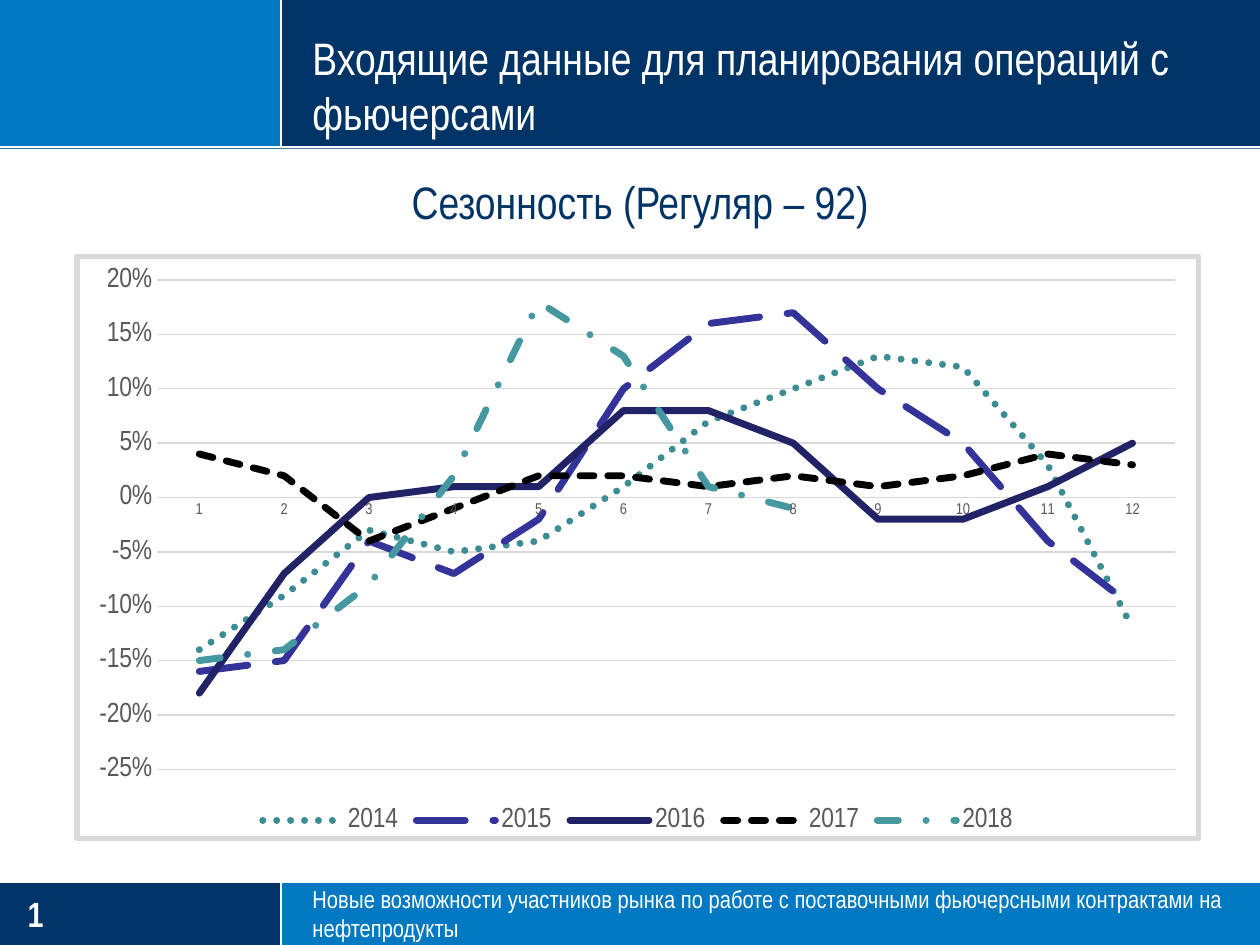
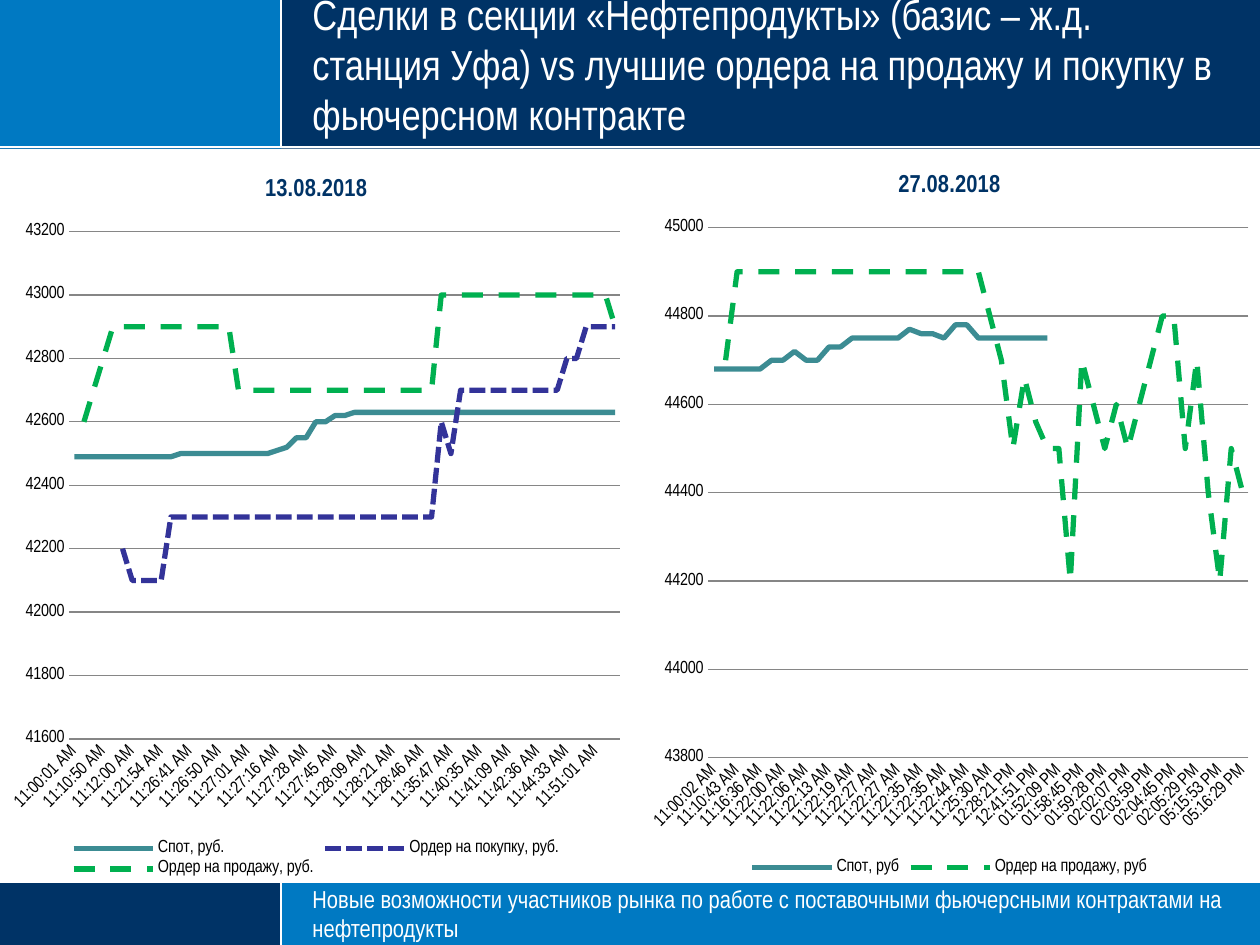
import pptx
import pptx.chart.data
import pptx.dml.color
import pptx.enum.chart
import pptx.enum.dml
import pptx.enum.shapes
import pptx.enum.text
import pptx.oxml
import pptx.util
from pptx.util import Cm

# Shared look
FONT = "Arial Narrow"
NAVY, BLUE, WHITE, BLACK = "003366", "0079C2", "FFFFFF", "000000"
TEAL, INDIGO, GREEN = "3C8C93", "333399", "00B050"
LABEL_GREY, PALE_GREY, GRID_GREY = "595959", "D9D9D9", "868686"
SLIDE_W, SLIDE_H = 25.4, 19.05
HEAD_H, HEAD_RULE, FOOT_TOP, SIDE_W = 3, 2.97, 17.78, 5.67
TEXT_LEFT, TEXT_W = 6.3, 18.49
FOOTER = ("Новые возможности участников рынка по работе с поставочными "
          "фьючерсными контрактами на нефтепродукты")
DASH = pptx.enum.dml.MSO_LINE
ANCHOR = pptx.enum.text.MSO_ANCHOR
NS = ('xmlns:a="http://schemas.openxmlformats.org/drawingml/2006/main" '
      'xmlns:c="http://schemas.openxmlformats.org/drawingml/2006/chart"')

# Seasonality by month: name, colour, dash, values
SEASONS = [
    ("2014", TEAL, DASH.ROUND_DOT,
     [-.14, -.09, -.03, -.05, -.04, .01, .07, .1, .13, .12, .03, -.12]),
    ("2015", INDIGO, DASH.LONG_DASH,
     [-.16, -.15, -.04, -.07, -.02, .1, .16, .17, .1, .05, -.04, -.1]),
    ("2016", "222267", None,
     [-.18, -.07, 0, .01, .01, .08, .08, .05, -.02, -.02, .01, .05]),
    ("2017", BLACK, DASH.SQUARE_DOT,
     [.04, .02, -.04, -.01, .02, .02, .01, .02, .01, .02, .04, .03]),
    ("2018", "4597A0", DASH.DASH_DOT,
     [-.15, -.14, -.08, .02, .18, .13, .01, -.01] + [None] * 4),
]

# Deal times of the two trading days
TIMES_13 = """11:00:01 11:10:00 11:10:35 11:10:50 11:11:03 11:11:45 11:12:00 11:15:59
11:20:39 11:21:54 11:22:19 11:26:41 11:26:41 11:26:44 11:26:50 11:26:50 11:26:52
11:27:01 11:27:01 11:27:07 11:27:08 11:27:16 11:27:22 11:27:28 11:27:28 11:27:39
11:27:39 11:27:45 11:27:51 11:28:02 11:28:09 11:28:09 11:28:15 11:28:21 11:28:42
11:28:42 11:28:46 11:29:13 11:35:36 11:35:47 11:36:59 11:40:35 11:40:35 11:40:44
11:41:09 11:41:09 11:41:14 11:42:36 11:42:36 11:42:56 11:44:15 11:44:33 11:44:56
11:45:21 11:51:01 12:05:16 12:54:56"""
TIMES_27 = """11:00:02 11:09:28 11:10:43 11:10:56 11:16:36 11:22:00 11:22:00 11:22:06
11:22:06 11:22:06 11:22:13 11:22:13 11:22:19 11:22:19 11:22:27 11:22:27 11:22:27
11:22:35 11:22:35 11:22:35 11:22:35 11:22:44 11:22:44 11:22:44 11:25:30 12:27:51
12:28:21 12:34:21 12:41:51 12:47:31 13:52:09 13:52:59 13:58:45 13:59:05 13:59:28
14:01:47 14:02:07 14:03:41 14:03:59 14:04:35 14:04:45 14:04:56 14:05:29 17:15:07
17:15:53 17:16:12 17:16:29"""

# Prices as (value, number of deals in a row)
SPOT_13 = [(42490, 11), (42500, 10), (42510, 1), (42520, 1), (42550, 2), (42600, 2),
           (42620, 2), (42630, 28)]
BUY_13 = [(None, 5), (42200, 1), (42100, 4), (42300, 28), (42600, 1), (42500, 1),
          (42700, 11), (42800, 2), (42900, 4)]
SELL_13 = [(None, 1), (42600, 1), (42700, 1), (42800, 1), (42900, 13), (42700, 21),
           (43000, 18), (42900, 1)]
SPOT_27 = [(44680, 5), (44700, 2), (44720, 1), (44700, 2), (44730, 2), (44750, 5),
           (44770, 1), (44760, 2), (44750, 1), (44780, 2), (44750, 7), (None, 17)]
SELL_27 = [(None, 1), (44700, 1), (44900, 22), (44800, 1), (44700, 1), (44500, 1),
           (44660, 1), (44560, 1), (44500, 2), (44200, 1), (44700, 1), (44600, 1),
           (44500, 1), (44600, 1), (44500, 1), (44600, 1), (44700, 1), (44800, 2),
           (44500, 1), (44700, 1), (44400, 1), (44200, 1), (44500, 1), (44400, 1)]


def expand(runs):
    return [value for value, count in runs for _ in range(count)]


def day_fractions(times):
    clocks = [[int(part) for part in time.split(":")] for time in times.split()]
    return [(h * 3600 + m * 60 + s) / 86400 for h, m, s in clocks]


def rgb(hex_colour):
    return pptx.dml.color.RGBColor.from_string(hex_colour)


def apply(target, values):
    for name, value in values.items():
        setattr(target, name, value)


def style_font(font, size, colour, bold=False):
    apply(font, {"name": FONT, "size": pptx.util.Pt(size), "bold": bold})
    font.color.rgb = rgb(colour)


def style_line(line, colour, width, dash=None):
    line.color.rgb = rgb(colour)
    line.width = pptx.util.Pt(width)
    if dash:
        line.dash_style = dash


# Slide elements
def add_band(slide, box, colour):
    band = slide.shapes.add_shape(pptx.enum.shapes.MSO_SHAPE.RECTANGLE, *map(Cm, box))
    band.shadow.inherit = False
    band.fill.solid()
    band.fill.fore_color.rgb = rgb(colour)
    band.line.fill.background()


def add_rule(slide, *ends):
    rule = slide.shapes.add_connector(
        pptx.enum.shapes.MSO_CONNECTOR.STRAIGHT, *map(Cm, ends))
    style_line(rule.line, WHITE, 1.25)
    rule._element.spPr.append(pptx.oxml.parse_xml(f"<a:effectLst {NS}/>"))


def add_text(slide, box, text, size, colour, anchor=ANCHOR.MIDDLE, bold=False):
    frame = slide.shapes.add_textbox(*map(Cm, box)).text_frame
    apply(frame, {"word_wrap": True, "vertical_anchor": anchor, "margin_left": 0,
                  "margin_right": 0, "margin_top": 0, "margin_bottom": 0})
    frame.text = text
    style_font(frame.paragraphs[0].runs[0].font, size, colour, bold)


def add_frame_slide(deck, title, title_size):
    slide = deck.slides.add_slide(deck.slide_layouts[6])
    foot_h = SLIDE_H - FOOT_TOP
    for box, colour in [((0, 0, SLIDE_W, HEAD_H), NAVY),
                        ((0, FOOT_TOP, SLIDE_W, foot_h), BLUE),
                        ((0, 0, SIDE_W, HEAD_H), BLUE),
                        ((0, FOOT_TOP, SIDE_W, foot_h), NAVY)]:
        add_band(slide, box, colour)
    for edge in (HEAD_RULE, FOOT_TOP):
        add_rule(slide, 0, edge, SLIDE_W, edge)
    for top, bottom in ((0, HEAD_RULE), (FOOT_TOP, SLIDE_H)):
        add_rule(slide, SIDE_W, top, SIDE_W, bottom)
    add_text(slide, (TEXT_LEFT, 0, TEXT_W, 2.81), title, title_size, WHITE, ANCHOR.BOTTOM)
    add_text(slide, (TEXT_LEFT, FOOT_TOP, TEXT_W, foot_h), FOOTER, 14, WHITE)
    return slide


# Charts
def set_plot_area(chart, box, area):
    sides = box[2:] * 2
    parts = "".join(f'<c:{tag} val="{length / side:.4f}"/>'
                    for tag, length, side in zip("xywh", area, sides))
    layout = pptx.oxml.parse_xml(
        f'<c:layout {NS}><c:manualLayout><c:layoutTarget val="inner"/>'
        f'<c:xMode val="edge"/><c:yMode val="edge"/>{parts}</c:manualLayout></c:layout>')
    plot_area = chart._chartSpace.chart.plotArea
    for old in plot_area.xpath("c:layout"):
        plot_area.remove(old)
    plot_area.insert(0, layout)


def add_line_chart(slide, box, area, categories, series, scale, width, text_size,
                   text_colour, grid_colour, value_format, category_format="General"):
    data = pptx.chart.data.CategoryChartData(number_format=value_format)
    data.categories = categories
    data.categories.number_format = category_format
    for name, _, _, values in series:
        data.add_series(name, values)
    chart = slide.shapes.add_chart(
        pptx.enum.chart.XL_CHART_TYPE.LINE, *map(Cm, box), data).chart
    style_font(chart.font, 10, BLACK)
    apply(chart, {"has_title": False, "has_legend": True})
    apply(chart.legend, {"include_in_layout": False,
                         "position": pptx.enum.chart.XL_LEGEND_POSITION.BOTTOM})
    style_font(chart.legend.font, text_size, text_colour)
    chart.plots[0].vary_by_categories = False
    for line, (_, colour, dash, _) in zip(chart.plots[0].series, series):
        line.smooth = False
        style_line(line.format.line, colour, width, dash)

    # Axes
    low, high, step = scale
    no_tick = pptx.enum.chart.XL_TICK_MARK.NONE
    apply(chart.value_axis, {"minimum_scale": low, "maximum_scale": high,
                             "major_unit": step, "has_major_gridlines": True})
    for axis in (chart.value_axis, chart.category_axis):
        apply(axis, {"major_tick_mark": no_tick, "minor_tick_mark": no_tick})
    style_font(chart.value_axis.tick_labels.font, text_size, text_colour)
    style_font(chart.category_axis.tick_labels.font, min(text_size, 10), text_colour)
    apply(chart.value_axis.tick_labels,
          {"number_format": value_format, "number_format_is_linked": False})
    chart.value_axis.format.line.fill.background()
    for line in (chart.value_axis.major_gridlines.format.line,
                 chart.category_axis.format.line):
        style_line(line, grid_colour, 0.75)
    set_plot_area(chart, box, area)
    return chart


def add_season_chart(slide):
    chart = add_line_chart(
        slide, (1.5, 5.11, 22.71, 11.84), (1.62, 0.49, 20.62, 9.95),
        [str(month) for month in range(1, 13)], SEASONS, (-0.25, 0.2, 0.05), 4,
        16, LABEL_GREY, PALE_GREY, "0%")
    style_font(chart.category_axis.tick_labels.font, 9, LABEL_GREY)
    for line in chart.plots[0].series:
        line.format.line._ln.set("cap", "rnd")
    border = pptx.oxml.parse_xml(
        f'<c:spPr {NS}><a:solidFill><a:srgbClr val="{WHITE}"/></a:solidFill>'
        f'<a:ln w="{pptx.util.Pt(3)}"><a:solidFill><a:srgbClr val="{PALE_GREY}"/>'
        '</a:solidFill></a:ln></c:spPr>')
    chart._chartSpace.chart.addnext(border)


def add_deals_chart(slide, date, box, area, times, series, scale, label_step):
    chart = add_line_chart(slide, box, area, day_fractions(times), series, scale, 3,
                           10, BLACK, GRID_GREY, "General", "hh:mm:ss AM/PM")
    chart.has_title = True
    heading = chart.chart_title.text_frame
    heading.text = date
    style_font(heading.paragraphs[0].runs[0].font, 14, NAVY, True)
    axis = chart.category_axis
    apply(axis.tick_labels, {"number_format": "hh:mm:ss AM/PM",
                             "number_format_is_linked": False})
    axis._element.txPr.bodyPr.set("rot", "-2700000")
    skip = pptx.oxml.parse_xml(f'<c:tickLblSkip {NS} val="{label_step}"/>')
    axis._element.xpath("c:noMultiLvlLbl")[0].addprevious(skip)


def main():
    deck = pptx.Presentation()
    apply(deck, {"slide_width": Cm(SLIDE_W), "slide_height": Cm(SLIDE_H)})

    # Seasonality
    season = add_frame_slide(
        deck, "Входящие данные для планирования операций с фьючерсами", 26)
    add_text(season, (0.56, 17.98, 4.14, 0.86), "1", 20, WHITE, bold=True)
    add_season_chart(season)
    add_text(season, (8.3, 3.5, 9.68, 1.32), "Сезонность (Регуляр – 92)", 26, NAVY,
             ANCHOR.TOP)

    # Deals against futures orders
    deals = add_frame_slide(
        deck, "Сделки в секции «Нефтепродукты» (базис – ж.д. станция Уфа) vs лучшие "
        "ордера на продажу и покупку в фьючерсном контракте", 24)
    add_deals_chart(
        deals, "13.08.2018", (0, 3.02, 12.75, 14.76), (1.4, 1.65, 11.1, 10.23),
        TIMES_13, [("Спот, руб.", TEAL, None, expand(SPOT_13)),
                   ("Ордер на покупку, руб.", INDIGO, DASH.SQUARE_DOT, expand(BUY_13)),
                   ("Ордер на продажу, руб.", GREEN, DASH.DASH, expand(SELL_13))],
        (41600, 43200, 200), 3)
    add_deals_chart(
        deals, "27.08.2018", (12.88, 2.94, 12.52, 14.81), (1.4, 1.65, 10.89, 10.69),
        TIMES_27, [("Спот, руб", TEAL, None, expand(SPOT_27)),
                   ("Ордер на продажу, руб", GREEN, DASH.DASH, expand(SELL_27))],
        (43800, 45000, 200), 2)
    deck.save("out.pptx")


if __name__ == "__main__":
    main()
